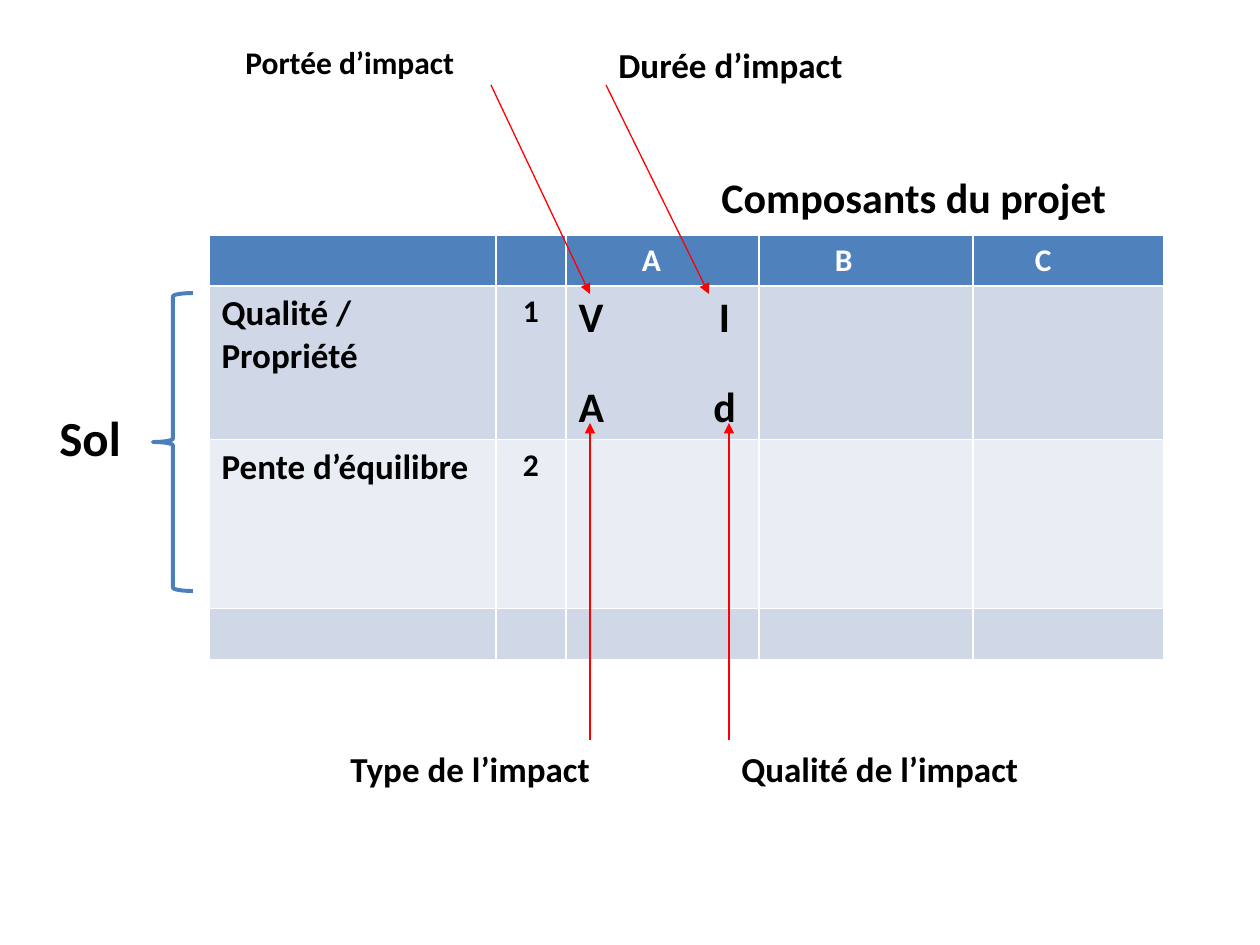
import pptx
import pptx.util
import pptx.dml.color
import pptx.enum.shapes
import pptx.enum.text
import pptx.oxml
import pptx.oxml.ns
from lxml import etree

RGB = pptx.dml.color.RGBColor
BLACK, WHITE, RED = RGB(0, 0, 0), RGB(255, 255, 255), RGB(255, 0, 0)
HEADER, BAND_DARK, BAND_LIGHT = RGB(0x4F, 0x81, 0xBD), RGB(0xD0, 0xD8, 0xE8), RGB(0xE9, 0xED, 0xF4)
BRACE = RGB(0x4B, 0x7E, 0xBC)
FONT = "Calibri"
PX_PER_INCH = 126

# Content: lengths in px, text sizes in points
TABLE_AT = (209, 235)
COLUMNS = [287, 70, 193, 214, 191]
ROWS = [51, 152, 169, 51]
ROW_FILLS = [HEADER, BAND_DARK, BAND_LIGHT, BAND_DARK]
HEADINGS = [(2, "A", 76), (3, "B", 76), (4, "C", 62)]  # column, text, left margin
CRITERIA = [("Qualité / Propriété", "1"), ("Pente d’équilibre", "2")]
IMPACT_CODES = [("V", "I"), ("A", "d")]
CODE_TAB = 146

LABELS = [  # text, size, left, top, width, height
    ("Sol", 28, 47, 401, 123, 72),
    ("Portée d’impact", 18, 233, 37, 257, 50),
    ("Durée d’impact", 20, 606, 37, 282, 55),
    ("Composants du projet", 24, 709, 165, 446, 63),
    ("Type de l’impact", 20, 338, 741, 268, 55),
    ("Qualité de l’impact", 20, 729, 741, 367, 55),
]
BRACE_AT = (153, 293, 40, 298)
ARROWS = [  # from x, y, to x, y
    (606, 85, 709, 294),
    (491, 85, 590, 294),
    (590, 740, 590, 423),
    (729, 740, 729, 423),
]


def px(n):
    return pptx.util.Emu(round(n * 914400 / PX_PER_INCH))


def add_run(p, text, size, color=BLACK):
    r = p.add_run()
    r.text = text
    r.font.name, r.font.size, r.font.bold = FONT, pptx.util.Pt(size), True
    r.font.color.rgb = color


def add_center_tab(p, position):
    tabs = etree.SubElement(p._p.get_or_add_pPr(), pptx.oxml.ns.qn("a:tabLst"))
    etree.SubElement(tabs, pptx.oxml.ns.qn("a:tab"), pos=str(px(position)), algn="ctr")


def add_impact_table(s):
    table = s.shapes.add_table(len(ROWS), len(COLUMNS), *map(px, TABLE_AT),
                               px(sum(COLUMNS)), px(sum(ROWS))).table
    for column, width in zip(table.columns, COLUMNS):
        column.width = px(width)
    for row, height, fill in zip(table.rows, ROWS, ROW_FILLS):
        row.height = px(height)
        for cell in row.cells:
            cell.fill.solid()
            cell.fill.fore_color.rgb = fill

    # Component headings
    for column, text, margin in HEADINGS:
        cell = table.cell(0, column)
        cell.margin_left = px(margin)
        add_run(cell.text_frame.paragraphs[0], text, 18, WHITE)

    # Soil criteria and their numbers
    for row, (name, number) in enumerate(CRITERIA, start=1):
        add_run(table.cell(row, 0).text_frame.paragraphs[0], name, 20)
        p = table.cell(row, 1).text_frame.paragraphs[0]
        p.alignment = pptx.enum.text.PP_ALIGN.CENTER
        add_run(p, number, 18)

    # Impact codes, one in each corner of the cell
    tf = table.cell(1, 2).text_frame
    for i, (left, right) in enumerate(IMPACT_CODES):
        p = tf.add_paragraph() if i else tf.paragraphs[0]
        if i:
            p.space_before = pptx.util.Pt(22)
        add_center_tab(p, CODE_TAB)
        add_run(p, left + "\t" + right, 24)


def add_brace(s):
    sp = s.shapes.add_shape(pptx.enum.shapes.MSO_SHAPE.LEFT_BRACE, *map(px, BRACE_AT))
    sp.shadow.inherit = False
    sp.fill.background()
    sp.line.color.rgb = BRACE
    sp.line.width = pptx.util.Pt(2.25)


def add_arrow(s, ends):
    sp = s.shapes.add_connector(pptx.enum.shapes.MSO_CONNECTOR.STRAIGHT, *map(px, ends))
    sp.line.color.rgb = RED
    sp.line.width = pptx.util.Pt(0.75)
    etree.SubElement(sp.line._get_or_add_ln(), pptx.oxml.ns.qn("a:tailEnd"), type="triangle")
    etree.SubElement(sp._element.spPr, pptx.oxml.ns.qn("a:effectLst"))


def add_label(s, text, size, *box):
    tf = s.shapes.add_textbox(*map(px, box)).text_frame
    tf.word_wrap = True
    add_run(tf.paragraphs[0], text, size)


def main():
    prs = pptx.Presentation()
    prs.slide_width, prs.slide_height = pptx.util.Inches(10), pptx.util.Inches(7.5)
    s = prs.slides.add_slide(prs.slide_layouts[6])
    add_impact_table(s)
    add_brace(s)
    for ends in ARROWS:
        add_arrow(s, ends)
    for label in LABELS:
        add_label(s, *label)
    prs.save("out.pptx")


if __name__ == "__main__":
    main()
